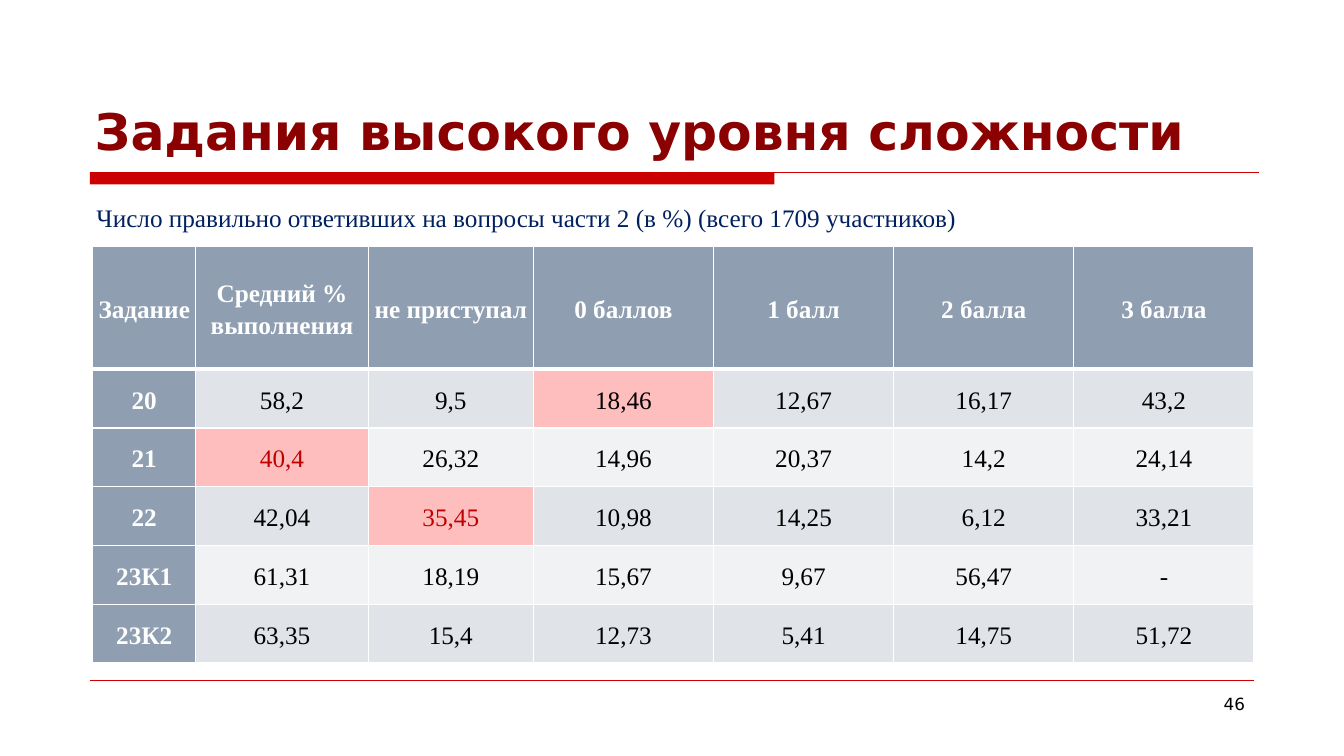
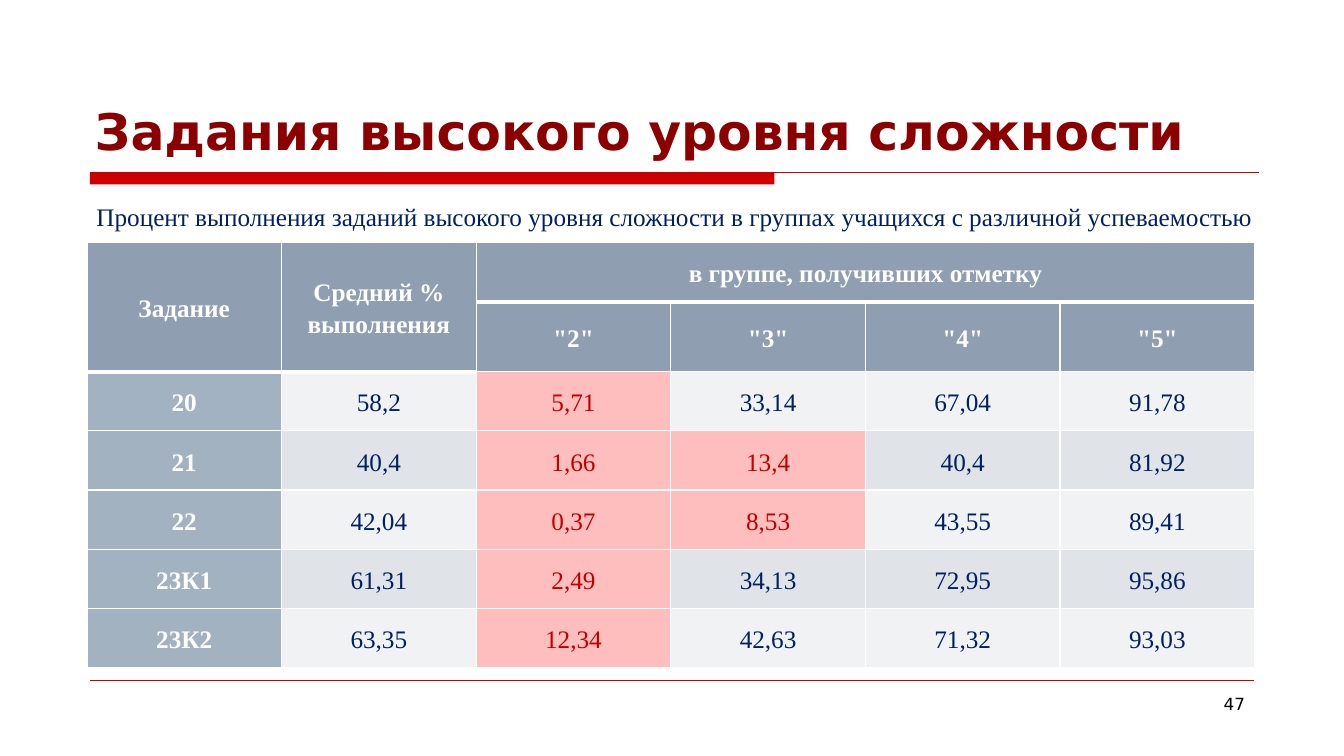
from lxml import etree
from pptx import Presentation, util as u
from pptx.dml.color import RGBColor
from pptx.enum import shapes, text
from pptx.oxml import ns

COLORS = {
    "band": "CC0000", "title": "8B0000", "navy": "002060", "black": "000000",
    "white": "FFFFFF", "head": "8F9FB1", "side": "A3B2C1", "dark": "E0E4E9",
    "light": "F0F2F4", "pink": "FFBEBE", "red": "C00000",
}
SANS, SERIF = "DejaVu Sans", "Times New Roman"
ALIGN, ANCHOR = text.PP_ALIGN, text.MSO_ANCHOR
COLUMNS, ROWS = 160, 90  # square grid over the slide
LEFT, RIGHT = 10.7, 149.3  # ends of the rules


def color(name):
    return RGBColor.from_string(COLORS[name])


def write(frame, words, font=SERIF, size=18, ink="navy", bold=False,
          align=ALIGN.LEFT, spacing=None):
    """Put one formatted paragraph into a text frame."""
    frame.word_wrap = True
    para = frame.paragraphs[0]
    para.alignment = align
    if spacing:
        para.line_spacing = spacing
    span = para.add_run()
    span.text = words
    span.font.name, span.font.size, span.font.bold = font, u.Pt(size), bold
    span.font.color.rgb = color(ink)


def border(cell, bottom=1):
    """Draw white cell borders, the lower one as thick as asked."""
    properties = cell._tc.get_or_add_tcPr()
    widths = {"a:lnL": 1, "a:lnR": 1, "a:lnT": 1, "a:lnB": bottom}
    for place, (tag, width) in enumerate(widths.items()):
        line = etree.Element(ns.qn(tag), w=str(u.Pt(width)))
        fill = etree.SubElement(line, ns.qn("a:solidFill"))
        etree.SubElement(fill, ns.qn("a:srgbClr"), val=COLORS["white"])
        properties.insert(place, line)


class Report:
    """Holds the deck, its style and the current slide."""

    def __init__(self):
        self.deck = Presentation()
        self.deck.slide_width, self.deck.slide_height = u.Inches(13.33), u.Inches(7.5)
        self.page = None

    def across(self, columns):
        return round(self.deck.slide_width * columns / COLUMNS)

    def down(self, rows):
        return round(self.deck.slide_height * rows / ROWS)

    def area(self, left, top, width, height):
        return self.across(left), self.down(top), self.across(width), self.down(height)

    def rule(self, right, top, weight):
        line = self.page.shapes.add_connector(
            shapes.MSO_CONNECTOR.STRAIGHT, self.across(LEFT), self.down(top),
            self.across(right), self.down(top))
        line.line.color.rgb, line.line.width = color("band"), u.Pt(weight)
        etree.SubElement(line._element.spPr, ns.qn("a:effectLst"))

    def band(self, *area):
        bar = self.page.shapes.add_shape(shapes.MSO_SHAPE.RECTANGLE, *self.area(*area))
        bar.shadow.inherit = False
        bar.fill.solid()
        bar.fill.fore_color.rgb = color("band")
        bar.line.fill.background()

    def label(self, words, *area, anchor=ANCHOR.TOP, **style):
        box = self.page.shapes.add_textbox(*self.area(*area))
        box.text_frame.vertical_anchor = anchor
        write(box.text_frame, words, **style)

    def start(self, title, number):
        """Add a slide with its title, red rules and page number."""
        self.page = self.deck.slides.add_slide(self.deck.slide_layouts[6])
        self.band(LEFT, 20.5, 81.5, 1.45)
        self.rule(149.9, 20.5, 0.75)
        self.rule(RIGHT, 81, 0.25)
        self.label(str(number), 114.7, 82, 34.7, 6.2, font=SANS, size=12,
                   ink="black", align=ALIGN.RIGHT)
        self.label(title, 10.1, 11, 140, 9, anchor=ANCHOR.MIDDLE, font=SANS,
                   size=36, ink="title", bold=True)

    def caption(self, words, middle):
        self.label(words, 10.3, middle - 2.4, 140.5, 4.8, anchor=ANCHOR.MIDDLE,
                   align=ALIGN.JUSTIFY)

    def table(self, left, top, widths, heights, rows, heads=1, side="head",
              ink="navy", inset=0.04, marks=None, merges=()):
        """Add a striped table; marks maps (row, column) to the ink on pink."""
        marks = marks or {}
        table = self.page.shapes.add_table(
            len(heights), len(widths),
            *self.area(left, top, sum(widths), sum(heights))).table
        table.first_row = table.horz_banding = False
        for column, width in zip(table.columns, widths):
            column.width = self.across(width)
        for row, height in zip(table.rows, heights):
            row.height = self.down(height)
        for first, last in merges:
            table.cell(*first).merge(table.cell(*last))
        for r, row in enumerate(rows):
            for c, words in enumerate(row):
                cell = table.cell(r, c)
                strong = r < heads or c == 0
                if r < heads:
                    fill = "head"
                elif c == 0:
                    fill = side
                elif (r, c) in marks:
                    fill = "pink"
                else:
                    fill = "dark" if r % 2 else "light"
                cell.fill.solid()
                cell.fill.fore_color.rgb = color(fill)
                border(cell, bottom=1 if r else 3)
                cell.vertical_anchor = ANCHOR.MIDDLE
                cell.margin_left = cell.margin_right = u.Inches(inset)
                cell.margin_top = cell.margin_bottom = 0
                if words:
                    write(cell.text_frame, words, bold=strong, spacing=1.15,
                          ink="white" if strong else marks.get((r, c), ink),
                          align=ALIGN.CENTER)


def main():
    report = Report()
    title = "Задания высокого уровня сложности"

    # Scores per task
    report.start(title, 46)
    report.caption("Число правильно ответивших на вопросы части 2 (в %) "
                   "(всего 1709 участников)", 25.9)
    report.table(
        11.05, 29.3, [12.25, 20.55, 19.65] + [21.45] * 4, [14.65] + [7] * 5,
        [["Задание", "Средний % выполнения", "не приступал",
          "0 баллов", "1 балл", "2 балла", "3 балла"],
         ["20", "58,2", "9,5", "18,46", "12,67", "16,17", "43,2"],
         ["21", "40,4", "26,32", "14,96", "20,37", "14,2", "24,14"],
         ["22", "42,04", "35,45", "10,98", "14,25", "6,12", "33,21"],
         ["23К1", "61,31", "18,19", "15,67", "9,67", "56,47", "-"],
         ["23К2", "63,35", "15,4", "12,73", "5,41", "14,75", "51,72"]],
        ink="black", marks={(1, 3): "black", (2, 1): "red", (3, 2): "red"})

    # Results per grade group
    report.start(title, 47)
    report.caption("Процент выполнения заданий высокого уровня сложности "
                   "в группах учащихся с различной успеваемостью", 25.8)
    weak = [(r, 2) for r in range(2, 7)] + [(3, 3), (4, 3)]
    report.table(
        10.35, 28.9, [23.17] * 6, [7.05, 8.3] + [7.05] * 5,
        [["Задание", "Средний % выполнения", "в группе, получивших отметку", "", "", ""],
         ["", "", '"2"', '"3"', '"4"', '"5"'],
         ["20", "58,2", "5,71", "33,14", "67,04", "91,78"],
         ["21", "40,4", "1,66", "13,4", "40,4", "81,92"],
         ["22", "42,04", "0,37", "8,53", "43,55", "89,41"],
         ["23К1", "61,31", "2,49", "34,13", "72,95", "95,86"],
         ["23К2", "63,35", "12,34", "42,63", "71,32", "93,03"]],
        heads=2, side="side", inset=0.07, marks=dict.fromkeys(weak, "red"),
        merges=[((0, 0), (1, 0)), ((0, 1), (1, 1)), ((0, 2), (0, 5))])

    report.deck.save("out.pptx")


if __name__ == "__main__":
    main()
